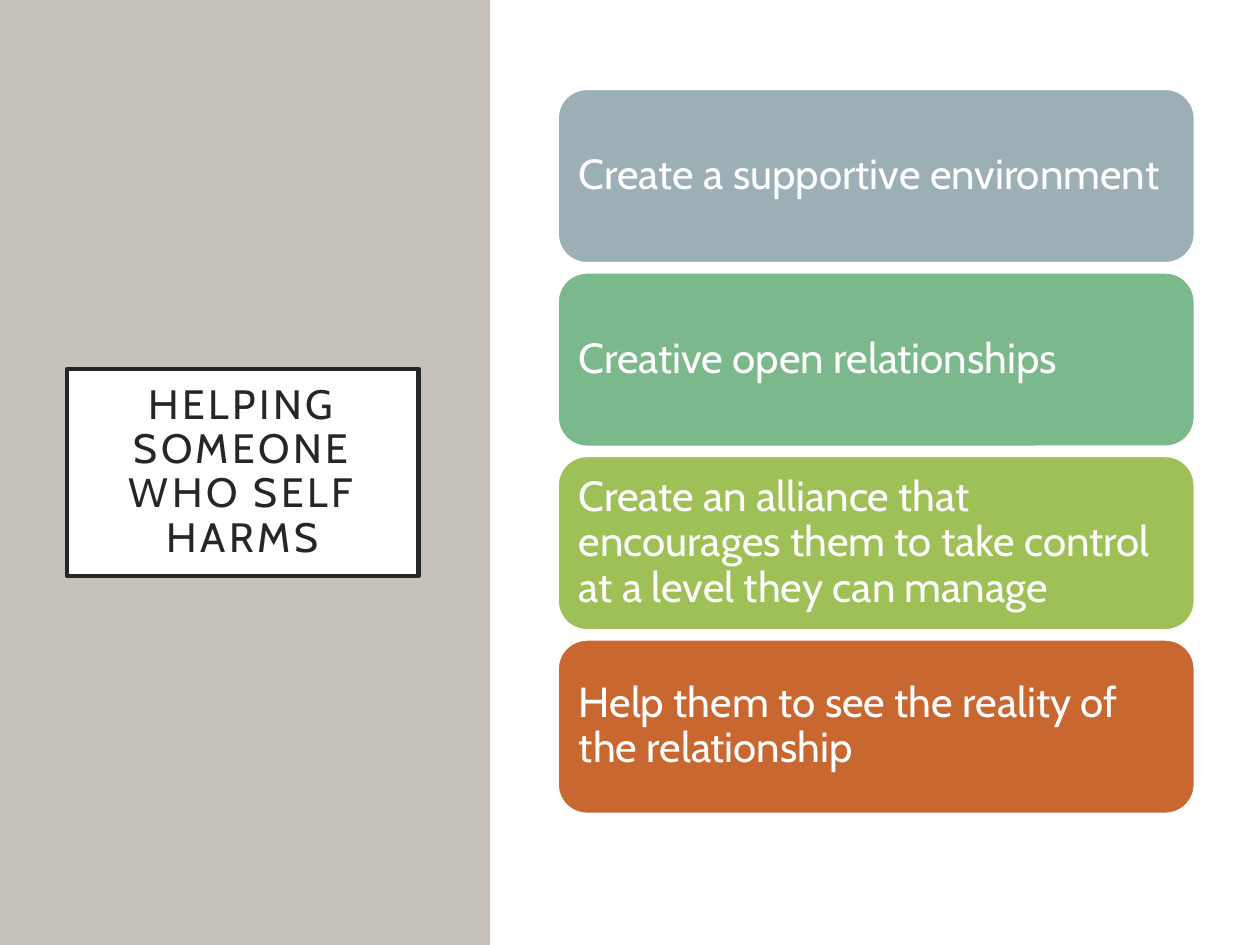
from pptx import Presentation
from pptx.dml.color import RGBColor
from pptx.enum.shapes import MSO_SHAPE
from pptx.enum.text import MSO_ANCHOR, MSO_AUTO_SIZE, PP_ALIGN
from pptx.util import Cm, Pt

FONT = "Cabin"
WHITE = RGBColor(0xFF, 0xFF, 0xFF)
INK = RGBColor(0x26, 0x26, 0x26)
STONE = RGBColor(0xC6, 0xC1, 0xBA)

TITLE = "HELPING SOMEONE WHO SELF HARMS"
ADVICE = [
    ("Create a supportive environment", RGBColor(0x9B, 0xAF, 0xB5)),
    ("Creative open relationships", RGBColor(0x7B, 0xB8, 0x8C)),
    ("Create an alliance that encourages them to take control "
     "at a level they can manage", RGBColor(0x9F, 0xC0, 0x57)),
    ("Help them to see the reality of the relationship",
     RGBColor(0xC9, 0x67, 0x31)),
]


def write_text(shape, text, size, color, align=PP_ALIGN.LEFT, inset=0.25,
               letter_spacing=0):
    frame = shape.text_frame
    frame.word_wrap = True
    frame.auto_size = MSO_AUTO_SIZE.NONE
    frame.vertical_anchor = MSO_ANCHOR.MIDDLE
    frame.margin_left = frame.margin_right = Cm(inset)
    frame.margin_top = frame.margin_bottom = Cm(inset)
    paragraph = frame.paragraphs[0]
    paragraph.alignment = align
    paragraph.line_spacing = 0.9
    run = paragraph.add_run()
    run.text = text
    run.font.name = FONT
    run.font.size = Pt(size)
    run.font.color.rgb = color
    if letter_spacing:
        # Letter spacing is stored in hundredths of a point
        run.font._element.set("spc", str(letter_spacing * 100))


def add_block(slide, kind, left, top, width, height, fill):
    block = slide.shapes.add_shape(
        kind, Cm(left), Cm(top), Cm(width), Cm(height))
    block.shadow.inherit = False
    block.fill.solid()
    block.fill.fore_color.rgb = fill
    block.line.fill.background()
    return block


def build_title_panel(slide, left, top, width, height):
    panel = add_block(slide, MSO_SHAPE.RECTANGLE,
                      left, top, width, height, STONE)

    # Framed title, in front of the panel
    title = slide.shapes.title
    panel.element.addnext(title.element)
    title.left, title.top = Cm(left + 1.35), Cm(top + 7.44)
    title.width, title.height = Cm(7.09), Cm(4.17)
    title.fill.solid()
    title.fill.fore_color.rgb = WHITE
    title.line.color.rgb = INK
    title.line.width = Pt(2.5)
    write_text(title, TITLE, size=23.4, color=INK, align=PP_ALIGN.CENTER,
               inset=0.5, letter_spacing=2)


def build_advice_cards(slide, left, top, width, height, gap=0.2):
    card_height = (height - gap * (len(ADVICE) - 1)) / len(ADVICE)
    for index, (advice, color) in enumerate(ADVICE):
        card = add_block(slide, MSO_SHAPE.ROUNDED_RECTANGLE, left,
                         top + index * (card_height + gap),
                         width, card_height, color)
        card.line.color.rgb = WHITE
        card.line.width = Pt(1)
        write_text(card, advice, size=24, color=WHITE)


def main():
    presentation = Presentation()
    presentation.slide_width = Cm(25.4)
    presentation.slide_height = Cm(19.05)
    slide = presentation.slides.add_slide(presentation.slide_layouts[5])

    # Left: title panel
    build_title_panel(slide, 0, 0, 9.88, 19.05)

    # Right: white area with the advice cards
    add_block(slide, MSO_SHAPE.RECTANGLE, 9.9, 0, 15.5, 19.05, WHITE)
    build_advice_cards(slide, 11.25, 1.8, 12.83, 14.6)

    presentation.save("out.pptx")


if __name__ == "__main__":
    main()
